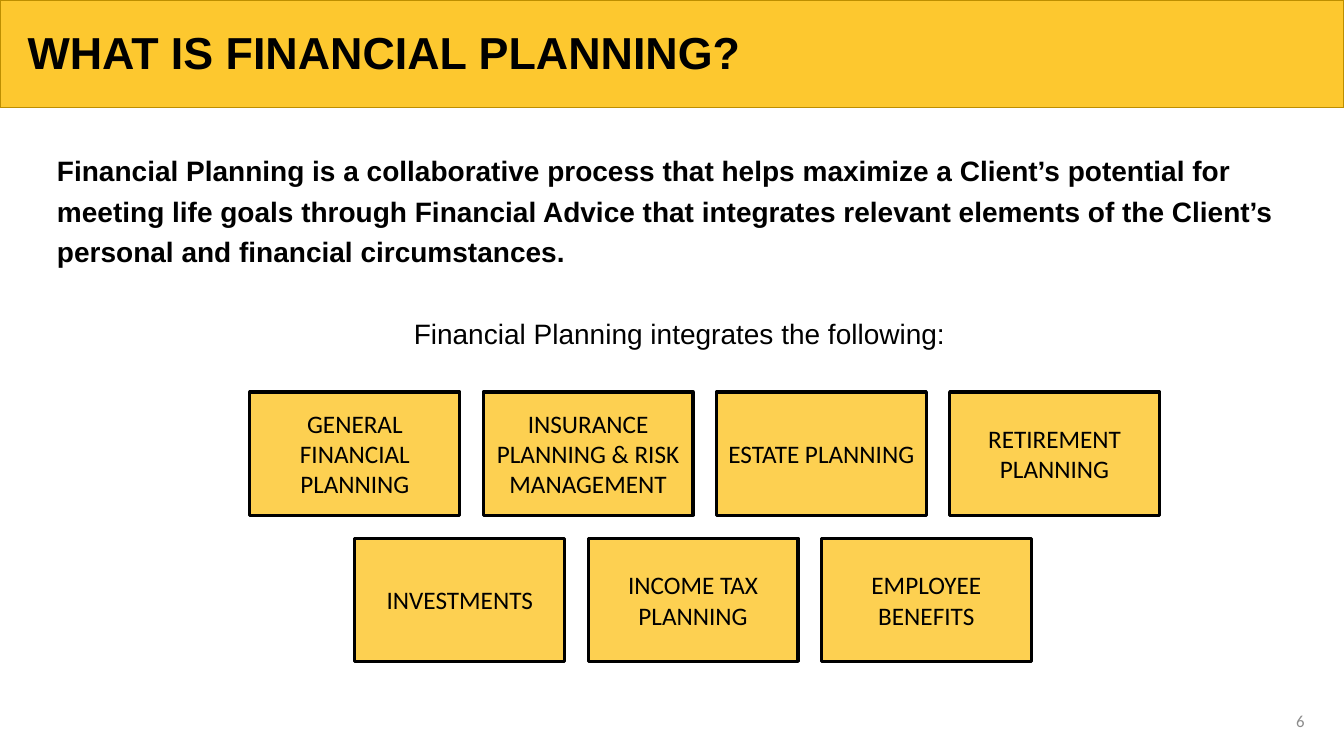
from pptx import Presentation
from pptx.dml.color import RGBColor
from pptx.enum.shapes import MSO_SHAPE
from pptx.enum.text import MSO_ANCHOR, MSO_AUTO_SIZE, PP_ALIGN
from pptx.oxml.ns import qn
from pptx.util import Pt


def paint(sp, fill, line, width):
    sp.shadow.inherit = False
    sp.fill.solid()
    sp.fill.fore_color.rgb = RGBColor.from_string(fill)
    sp.line.color.rgb = RGBColor.from_string(line)
    sp.line.width = Pt(width)


def write(sp, text, size, font="Arial", color="000000", bold=False,
          align=PP_ALIGN.LEFT, anchor=MSO_ANCHOR.TOP, spacing=1.0):
    """Fill a shape with one paragraph, without bullet, and return it."""
    tf = sp.text_frame
    tf.word_wrap = True
    tf.auto_size = MSO_AUTO_SIZE.NONE
    tf.vertical_anchor = anchor
    p = tf.paragraphs[0]
    p.text = text
    p.alignment = align
    p.line_spacing = spacing
    p.space_before = Pt(0)
    p.font.name = font
    p.font.size = Pt(size)
    p.font.bold = bold
    p.font.color.rgb = RGBColor.from_string(color)
    return p


def_size = Pt(960), Pt(540)
prs = Presentation()
prs.slide_width, prs.slide_height = def_size
s = prs.slides.add_slide(prs.slide_layouts[1])
title, body = s.placeholders

# Banner, placed behind the title
banner = s.shapes.add_shape(MSO_SHAPE.RECTANGLE, 0, 0, prs.slide_width, Pt(77))
paint(banner, "FDC82F", "BD8E00", 1)
title.element.addprevious(banner.element)

title.left, title.top, title.width, title.height = Pt(12.5), Pt(18.5), Pt(770), Pt(35.5)
write(title, "WHAT IS FINANCIAL PLANNING?", 32, bold=True, spacing=0.9)

# Definition
body.left, body.top, body.width, body.height = Pt(33.5), Pt(101.5), Pt(905), Pt(114.5)
p = write(body, "Financial Planning is a collaborative process that helps maximize a "
          "Client’s potential for meeting life goals through Financial Advice that "
          "integrates relevant elements of the Client’s personal and financial "
          "circumstances.", 20, bold=True, spacing=1.2)
pPr = p._p.get_or_add_pPr()
pPr.set("marL", "0")
pPr.set("indent", "0")
pPr.insert_element_before(pPr.makeelement(qn("a:buNone"), {}), "a:tabLst", "a:defRPr")

intro = s.shapes.add_textbox(Pt(33), Pt(218), Pt(905), Pt(45.5))
write(intro, "Financial Planning integrates the following:", 20,
      align=PP_ALIGN.CENTER, spacing=1.2)

# Planning areas: left and top of each row, then its labels
BOX_W, BOX_H, PITCH = 150, 88, 166.6
rows = [
    (178.5, 280, ["GENERAL FINANCIAL PLANNING", "INSURANCE PLANNING & RISK MANAGEMENT",
                  "ESTATE PLANNING", "RETIREMENT PLANNING"]),
    (253.5, 384.5, ["INVESTMENTS", "INCOME TAX PLANNING", "EMPLOYEE BENEFITS"]),
]
for left, top, areas in rows:
    for i, area in enumerate(areas):
        box = s.shapes.add_shape(MSO_SHAPE.RECTANGLE, Pt(left + i * PITCH), Pt(top),
                                 Pt(BOX_W), Pt(BOX_H))
        paint(box, "FDD051", "000000", 2.25)
        write(box, area, 18, font="Calibri", align=PP_ALIGN.CENTER,
              anchor=MSO_ANCHOR.MIDDLE)

number = s.shapes.add_textbox(Pt(906.5), Pt(500.5), Pt(32.5), Pt(28.75))
write(number, "6", 12, font="Calibri", color="8C8C8C", align=PP_ALIGN.RIGHT,
      anchor=MSO_ANCHOR.MIDDLE)

prs.save("out.pptx")
